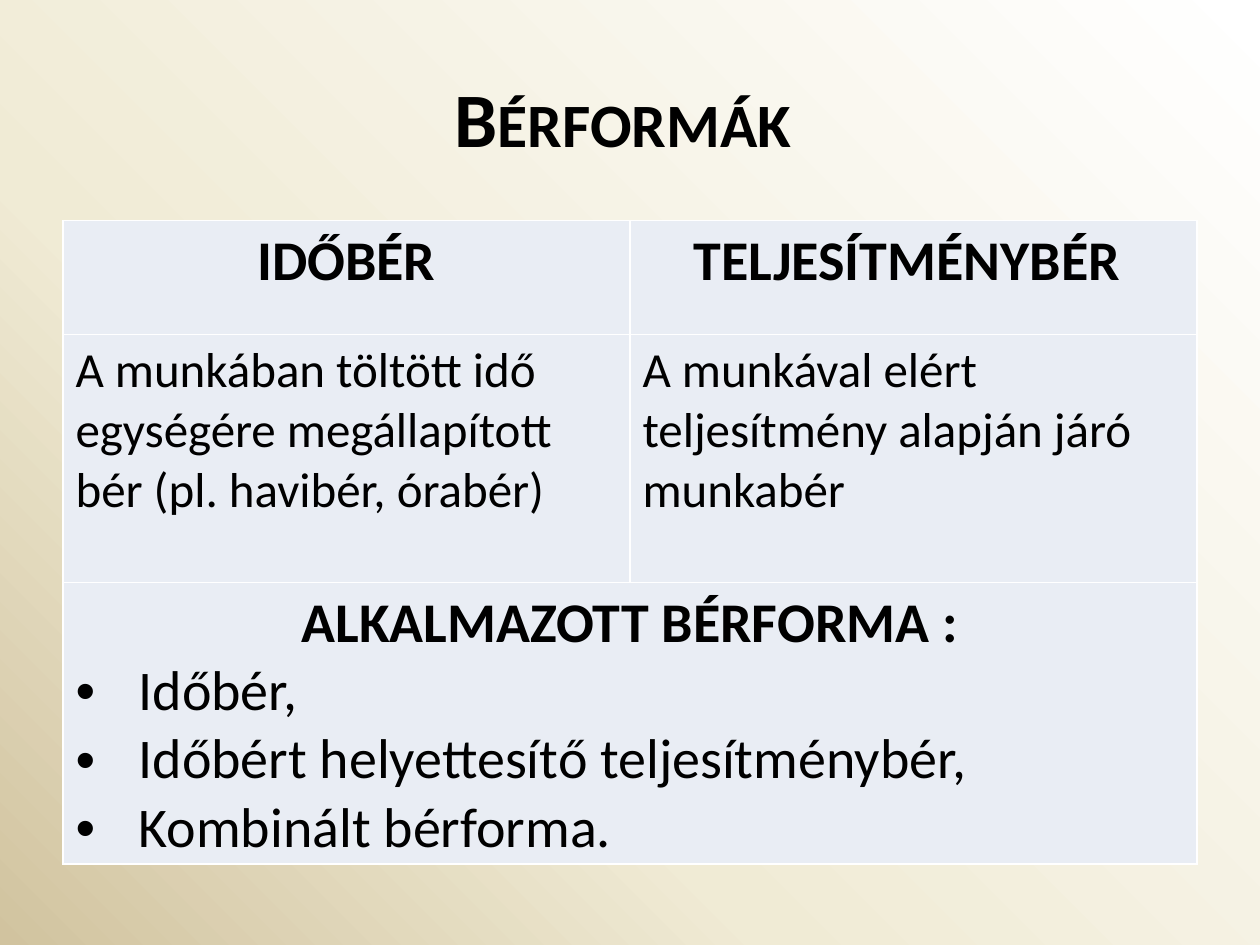
from copy import deepcopy
from dataclasses import dataclass

from lxml.etree import SubElement
from pptx import Presentation
from pptx.dml.color import RGBColor
from pptx.enum.text import MSO_ANCHOR, PP_ALIGN
from pptx.oxml.ns import qn
from pptx.slide import Slide
from pptx.table import _Cell
from pptx.text.text import TextFrame
from pptx.util import Cm, Pt

INK, CELL_FILL, RULE = "000000", "E9EDF4", "FFFFFF"
BACKDROP = [(0, "FFFFFF"), (0.65, "F0EBD5"), (1, "D1C39F")]
MARGIN, CONTENT_WIDTH = Cm(1.27), Cm(22.86)
ROW_HEIGHTS = [Cm(2.29), Cm(5), Cm(5.66)]


@dataclass(frozen=True)
class Line:
    text: str
    size: float = 32
    bold: bool = False
    centred: bool = False
    bullet: bool = False
    small_caps: bool = False


TITLE = Line("Bérformák ", 44, bold=True, centred=True, small_caps=True)
WAGE_FORMS = [
    [[Line("IDŐBÉR", bold=True, centred=True)],
     [Line("TELJESÍTMÉNYBÉR ", bold=True, centred=True)]],
    [[Line("A munkában töltött idő egységére megállapított bér (pl. havibér, órabér)", 28)],
     [Line("A munkával elért teljesítmény alapján járó munkabér", 28)]],
    [[Line("ALKALMAZOTT BÉRFORMA :", bold=True, centred=True),
      Line("Időbér,", bullet=True),
      Line("Időbért helyettesítő teljesítménybér,", bullet=True),
      Line("Kombinált bérforma.", bullet=True)]],
]


def colour(value: str) -> RGBColor:
    return RGBColor.from_string(value)


def assign(target: object, values: dict) -> None:
    for key, value in values.items():
        setattr(target, key, value)


def write(frame: TextFrame, lines: list[Line]) -> None:
    for index, line in enumerate(lines):
        paragraph = frame.add_paragraph() if index else frame.paragraphs[0]
        paragraph.alignment = PP_ALIGN.CENTER if line.centred else PP_ALIGN.LEFT
        if line.bullet:
            properties = paragraph._p.get_or_add_pPr()
            properties.set("marL", str(Cm(1.27)))
            properties.set("indent", str(-Cm(1.27)))
            SubElement(properties, qn("a:buFont"), typeface="Arial")
            SubElement(properties, qn("a:buChar"), char="•")
        run = paragraph.add_run()
        run.text = line.text
        assign(run.font, {"name": "Calibri", "size": Pt(line.size), "bold": line.bold})
        run.font.color.rgb = colour(INK)
        if line.small_caps:
            run._r.get_or_add_rPr().set("cap", "small")


def paint_backdrop(slide: Slide) -> None:
    fill = slide.background.fill
    fill.gradient()
    fill.gradient_angle = 225
    stops = next(slide.element.iter(qn("a:gsLst")))
    stops.append(deepcopy(stops[-1]))
    for stop, (position, value) in zip(fill.gradient_stops, BACKDROP):
        stop.position = position
        stop.color.rgb = colour(value)


def format_cell(cell: _Cell) -> None:
    properties = cell._tc.get_or_add_tcPr()
    for side in ("lnL", "lnR", "lnT", "lnB"):
        border = SubElement(properties, qn(f"a:{side}"), w=str(Pt(1)))
        SubElement(SubElement(border, qn("a:solidFill")), qn("a:srgbClr"), val=RULE)
    cell.fill.solid()
    cell.fill.fore_color.rgb = colour(CELL_FILL)


def add_title(slide: Slide) -> None:
    frame = slide.shapes.add_textbox(MARGIN, Cm(0.76), CONTENT_WIDTH, Cm(3.18)).text_frame
    assign(frame, {"word_wrap": True, "vertical_anchor": MSO_ANCHOR.MIDDLE})
    write(frame, [TITLE])


def add_wage_table(slide: Slide) -> None:
    table = slide.shapes.add_table(
        len(ROW_HEIGHTS), 2, MARGIN, Cm(4.45), CONTENT_WIDTH, sum(ROW_HEIGHTS)
    ).table
    assign(table, {"first_row": False, "horz_banding": False})
    for row, height in zip(table.rows, ROW_HEIGHTS):
        row.height = height
    for cell in table.iter_cells():
        format_cell(cell)
    table.cell(2, 0).merge(table.cell(2, 1))
    for row_index, row in enumerate(WAGE_FORMS):
        for column_index, lines in enumerate(row):
            write(table.cell(row_index, column_index).text_frame, lines)


def main() -> None:
    presentation = Presentation()
    assign(presentation, {"slide_width": Cm(25.4), "slide_height": Cm(19.05)})
    slide = presentation.slides.add_slide(presentation.slide_layouts[6])
    paint_backdrop(slide)
    add_title(slide)
    add_wage_table(slide)
    presentation.save("out.pptx")


if __name__ == "__main__":
    main()
